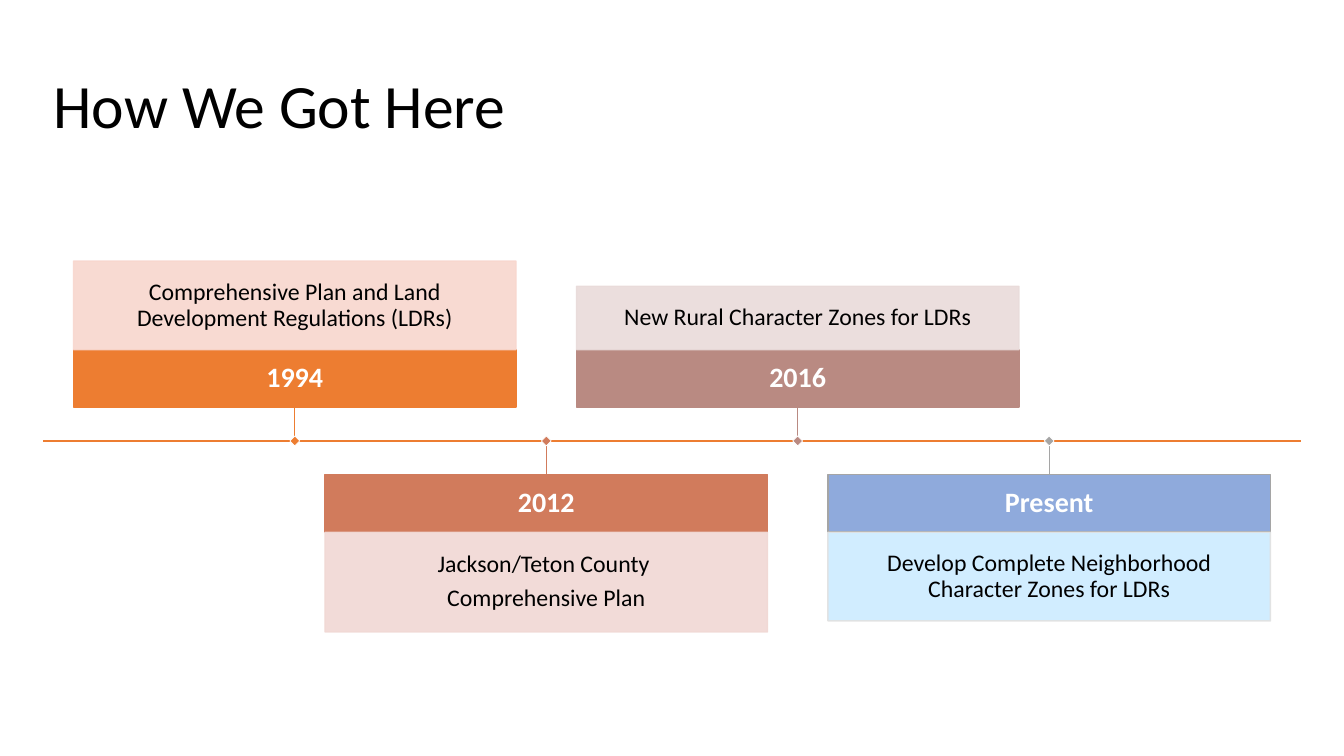
from dataclasses import dataclass

from lxml import etree
from pptx import Presentation
from pptx import util as u
from pptx.dml.color import RGBColor
from pptx.enum import shapes, text
from pptx.oxml import ns

# Slide and timeline grid, in inches
SLIDE_W, SLIDE_H = 13.33, 7.5
AXIS_LEFT, AXIS_RIGHT = 0.43, 12.9
AXIS_Y = SLIDE_H * 7 / 12
COLUMN = (AXIS_RIGHT - AXIS_LEFT) / 5
CARD_W = COLUMN * 1.76
YEAR_H = 0.57
STEM = 0.67 / 2
MARKER = 0.07

FONT = "Calibri"
BLACK = RGBColor(0x00, 0x00, 0x00)
WHITE = RGBColor(0xFF, 0xFF, 0xFF)
ORANGE = RGBColor(0xED, 0x7D, 0x31)
PEACH = RGBColor(0xF8, 0xD7, 0xCE)
RUST = RGBColor(0xD1, 0x7B, 0x5C)
PINK = RGBColor(0xF1, 0xD8, 0xD4)
MAUVE = RGBColor(0xB9, 0x8A, 0x82)
PALE_MAUVE = RGBColor(0xE9, 0xDB, 0xDA)
BLUE = RGBColor(0x8F, 0xAA, 0xDC)
PALE_BLUE = RGBColor(0xCC, 0xEC, 0xFF)
GREY = RGBColor(0xA5, 0xA5, 0xA5)
PALE_GREY = RGBColor(0xE1, 0xE1, 0xE1)


@dataclass
class Milestone:
    year: str
    lines: list[str]
    detail_h: float
    fill: RGBColor
    accent: RGBColor
    detail_fill: RGBColor
    detail_line: RGBColor


MILESTONES = [
    Milestone("1994", ["Comprehensive Plan and Land Development Regulations (LDRs)"],
              0.88, ORANGE, ORANGE, PEACH, PEACH),
    Milestone("2012", ["Jackson/Teton County ", "Comprehensive Plan"],
              0.99, RUST, RUST, PINK, PINK),
    Milestone("2016", ["New Rural Character Zones for LDRs"],
              0.63, MAUVE, MAUVE, PALE_MAUVE, PALE_MAUVE),
    Milestone("Present", ["Develop Complete Neighborhood Character Zones for LDRs"],
              0.88, BLUE, GREY, PALE_BLUE, PALE_GREY),
]


def write(sp, lines: list[str], *, size: float, color: RGBColor = BLACK,
          bold: bool = False, align=text.PP_ALIGN.CENTER,
          inset: float = 0.1, after: float = 0) -> None:
    tf = sp.text_frame
    tf.word_wrap = True
    tf.vertical_anchor = text.MSO_ANCHOR.MIDDLE
    tf.margin_left = tf.margin_right = u.Inches(inset)
    tf.margin_top = tf.margin_bottom = u.Inches(inset)
    for i, line in enumerate(lines):
        p = tf.paragraphs[0] if i == 0 else tf.add_paragraph()
        p.alignment = align
        p.line_spacing = 0.9
        p.space_before = u.Pt(0)
        p.space_after = u.Pt(after)
        r = p.add_run()
        r.text = line
        r.font.name = FONT
        r.font.size = u.Pt(size)
        r.font.bold = bold
        r.font.color.rgb = color


def add_box(s, x: float, y: float, w: float, h: float, fill: RGBColor,
            line: RGBColor, width: float = 1, opacity: int = 100):
    sp = s.shapes.add_shape(shapes.MSO_SHAPE.RECTANGLE, u.Inches(x), u.Inches(y),
                            u.Inches(w), u.Inches(h))
    sp.shadow.inherit = False
    sp.fill.solid()
    sp.fill.fore_color.rgb = fill
    sp.line.color.rgb = line
    sp.line.width = u.Pt(width)
    if opacity < 100:
        for clr in sp._element.spPr.iter(ns.qn("a:srgbClr")):
            etree.SubElement(clr, ns.qn("a:alpha"), val=str(opacity * 1000))
    return sp


def add_line(s, x1: float, y1: float, x2: float, y2: float,
             color: RGBColor, width: float):
    cx = s.shapes.add_connector(shapes.MSO_CONNECTOR.STRAIGHT, u.Inches(x1),
                                u.Inches(y1), u.Inches(x2), u.Inches(y2))
    cx.line.color.rgb = color
    cx.line.width = u.Pt(width)
    etree.SubElement(cx._element.spPr, ns.qn("a:effectLst"))
    return cx


def add_milestone(s, m: Milestone, index: int) -> None:
    above = index % 2 == 0
    x = AXIS_LEFT + COLUMN * (index + 1)
    left = x - CARD_W / 2
    year_y = AXIS_Y - STEM - YEAR_H if above else AXIS_Y + STEM
    detail_y = year_y - m.detail_h if above else year_y + YEAR_H

    # Year band and its description
    year = add_box(s, left, year_y, CARD_W, YEAR_H, m.fill, m.accent)
    write(year, [m.year], size=20, color=WHITE, bold=True, inset=0.11)
    detail = add_box(s, left, detail_y, CARD_W, m.detail_h,
                     m.detail_fill, m.detail_line, opacity=90)
    write(detail, m.lines, size=17, inset=0.18, after=6)

    # Stem and diamond marker on the axis
    edge_y = year_y + YEAR_H if above else year_y
    stem = add_line(s, x, edge_y, x, AXIS_Y, m.accent, 0.5)
    stem.begin_connect(year, 2 if above else 0)
    marker = add_box(s, x - MARKER / 2, AXIS_Y - MARKER / 2, MARKER, MARKER,
                     m.accent, WHITE, width=0.5)
    marker.rotation = 45


def main() -> None:
    prs = Presentation()
    prs.slide_width, prs.slide_height = u.Inches(SLIDE_W), u.Inches(SLIDE_H)
    s = prs.slides.add_slide(prs.slide_layouts[5])

    # Title
    title = s.shapes.title
    title.left, title.top = u.Inches(AXIS_LEFT), u.Inches(0.35)
    title.width, title.height = u.Inches(12.48), u.Inches(1.45)
    write(title, ["How We Got Here"], size=44, align=text.PP_ALIGN.LEFT)

    # Timeline
    add_line(s, AXIS_LEFT, AXIS_Y, AXIS_RIGHT, AXIS_Y, ORANGE, 1)
    for index, milestone in enumerate(MILESTONES):
        add_milestone(s, milestone, index)

    prs.save("out.pptx")


if __name__ == "__main__":
    main()
